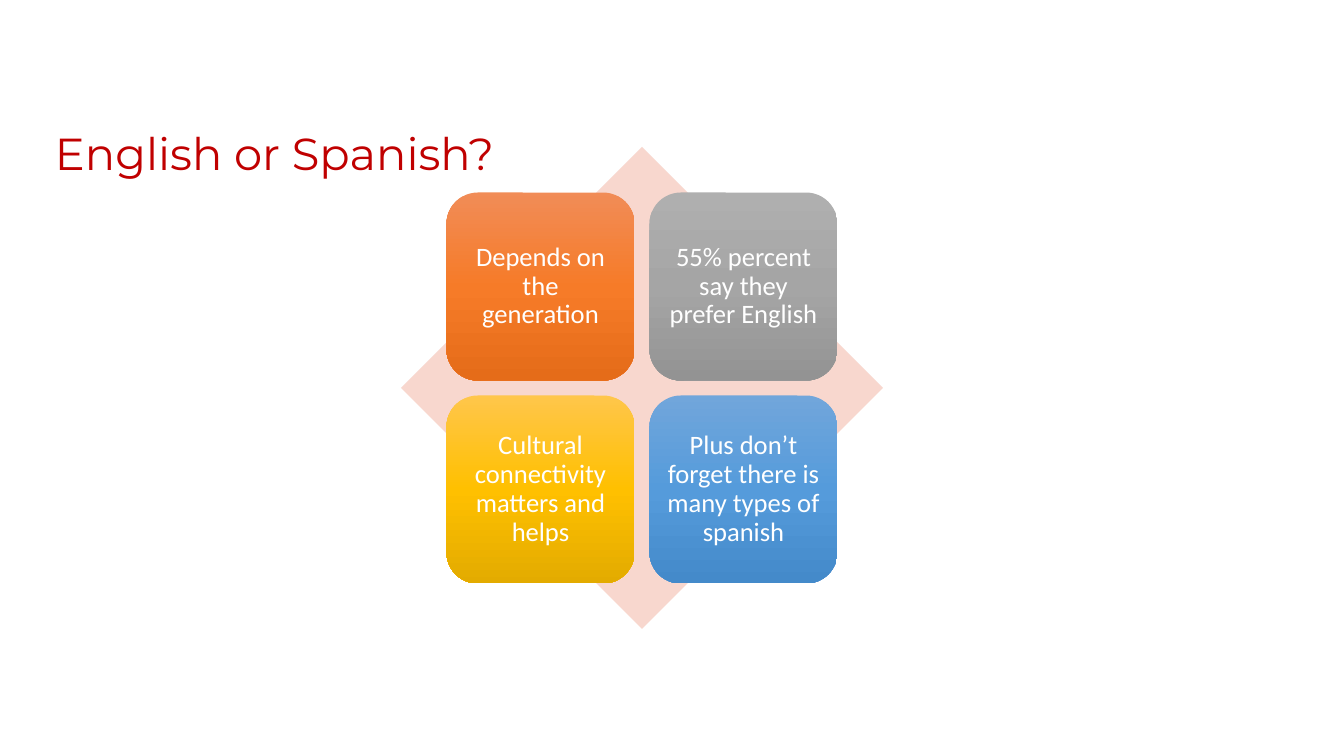
from copy import deepcopy

from pptx import Presentation
from pptx.dml.color import RGBColor
from pptx.enum.shapes import MSO_SHAPE
from pptx.enum.text import MSO_ANCHOR, PP_ALIGN
from pptx.oxml.ns import qn
from pptx.util import Pt

DIAMOND = MSO_SHAPE.DIAMOND
ROUND = MSO_SHAPE.ROUNDED_RECTANGLE
TOP, MIDDLE = MSO_ANCHOR.TOP, MSO_ANCHOR.MIDDLE
LEFT, CENTER = PP_ALIGN.LEFT, PP_ALIGN.CENTER
SCALE = 914400 / 100.8

TILES = [
    ("Depends on the generation", ("F18C57", "F67B28", "E56C19")),
    ("55% percent say they prefer English", ("AFAFAF", "A5A5A5", "939393")),
    ("Cultural connectivity matters and helps", ("FFC64B", "FFC000", "E3AB00")),
    ("Plus don’t forget there is many types of spanish",
     ("71A6DB", "559BDB", "448ACA")),
]


def px(count):
    return round(count * SCALE)


def color(code):
    return RGBColor.from_string(code)


def write(shape, text, font, size, code, align, anchor, pad):
    """Put one line of styled text in a shape, with (side, top) padding."""
    frame = shape.text_frame
    frame.word_wrap = True
    frame.vertical_anchor = anchor
    frame.margin_left = frame.margin_right = px(pad[0])
    frame.margin_top = frame.margin_bottom = px(pad[1])
    para = frame.paragraphs[0]
    para.alignment = align
    para.line_spacing = 0.9
    run = para.add_run()
    run.text = text
    run.font.name = font
    run.font.size = Pt(size)
    run.font.color.rgb = color(code)


def add_form(slide, kind, left, top, size):
    """Add a square shape without line or shadow."""
    shape = slide.shapes.add_shape(kind, px(left), px(top), px(size), px(size))
    shape.shadow.inherit = False
    shape.line.fill.background()
    return shape


def shade(shape, codes):
    """Fill from top to bottom through three evenly spaced colours."""
    fill = shape.fill
    fill.gradient()
    fill.gradient_angle = 270
    first = shape._element.spPr.find(".//" + qn("a:gs"))
    first.addnext(deepcopy(first))
    for index, (stop, code) in enumerate(zip(fill.gradient_stops, codes)):
        stop.position = index / 2
        stop.color.rgb = color(code)


def add_title(slide, left, top, width, height):
    box = slide.shapes.add_textbox(px(left), px(top), px(width), px(height))
    write(box, "English or Spanish?", "Montserrat", 32, "C00000",
          LEFT, TOP, (10, 5))


def add_matrix(slide, left, top, size):
    """Diamond with a two by two grid of tiles centred on it."""
    back = add_form(slide, DIAMOND, left, top, size)
    back.fill.solid()
    back.fill.fore_color.rgb = color("F8D7CE")

    # Tiles
    side, gap = 188, 15
    edge = (size - 2 * side - gap) / 2
    for index, (text, codes) in enumerate(TILES):
        row, col = divmod(index, 2)
        tile = add_form(slide, ROUND, left + edge + col * (side + gap),
                        top + edge + row * (side + gap), side)
        shade(tile, codes)
        write(tile, text, "Calibri", 19, "FFFFFF", CENTER, MIDDLE, (8, 8))


def main():
    deck = Presentation()
    deck.slide_width, deck.slide_height = px(1344), px(756)
    slide = deck.slides.add_slide(deck.slide_layouts[6])
    add_title(slide, 45, 127, 706, 147)
    add_matrix(slide, 401, 147, 482)
    deck.save("out.pptx")


if __name__ == "__main__":
    main()
